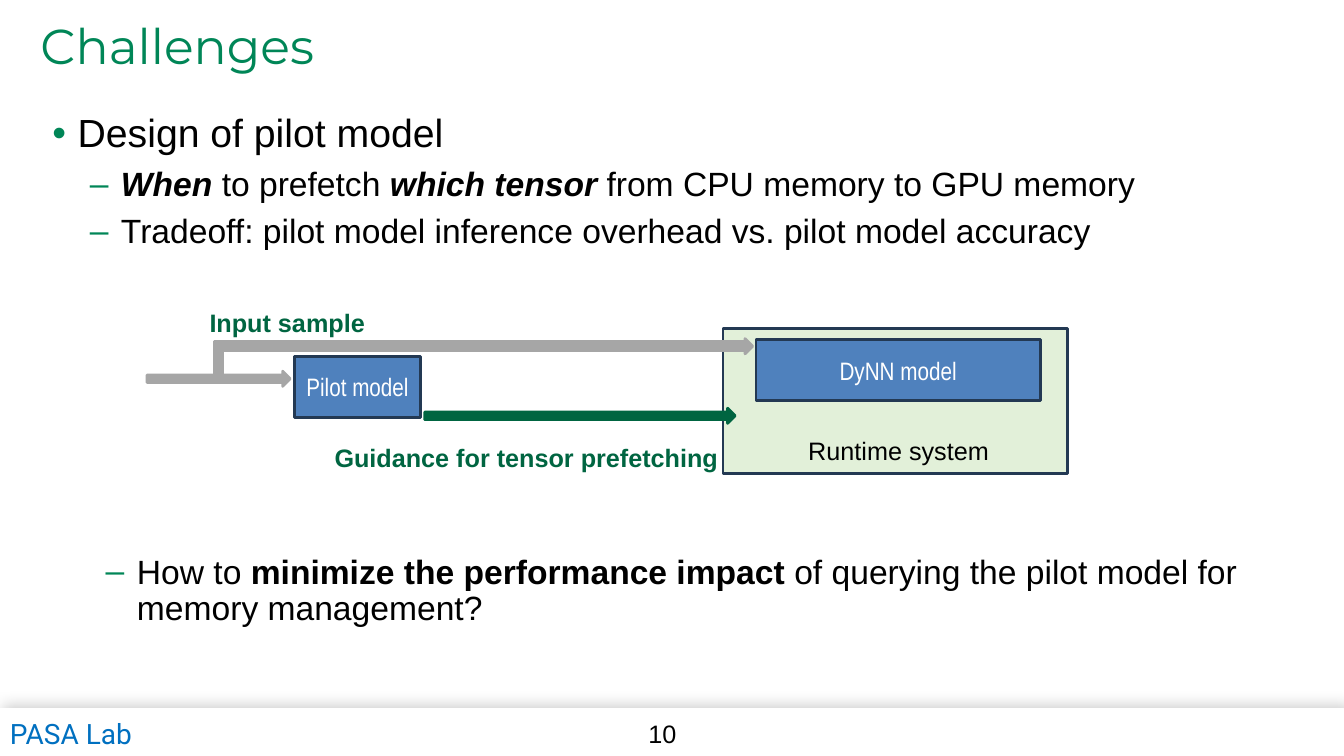
from lxml import etree
from pptx import Presentation
from pptx import util as u
from pptx.dml.color import RGBColor
from pptx.enum import shapes, text
from pptx.oxml.ns import qn

COLORS = {
    "title": "008657", "dark green": "006541", "gray": "A6A6A6",
    "blue": "4F81BD", "navy": "233953", "pale green": "E2F0D9",
    "lab": "0070C0", "black": "000000", "white": "FFFFFF",
}
KIND = shapes.MSO_SHAPE

deck = Presentation()
deck.slide_width, deck.slide_height = u.Inches(13.33), u.Inches(7.5)
column, row = deck.slide_width / 100, deck.slide_height / 100
slide = deck.slides.add_slide(deck.slide_layouts[1])


def cells(x, y, w, h):
    return [round(n) for n in (x * column, y * row, w * column, h * row)]


def add_run(paragraph, words, size, font, color, bold=False, italic=False):
    run = paragraph.add_run()
    run.text = words
    run.font.size, run.font.name = u.Pt(size), font
    run.font.bold, run.font.italic = bold, italic
    run.font.color.rgb = RGBColor.from_string(COLORS[color])


diagram = [
    (KIND.RECTANGLE, (0, 93.7, 100, 6.3), "white", "white", 0.75, ""),
    (KIND.RECTANGLE, (53.8, 43.5, 25.65, 19.1), "pale green", "navy", 2, ""),
    (KIND.RECTANGLE, (21.9, 47.1, 9.4, 8.1), "blue", "navy", 2, "Pilot model"),
    (KIND.RECTANGLE, (56.25, 44.9, 21.15, 8.1), "blue", "navy", 2, "DyNN model"),
    (KIND.RIGHT_ARROW, (10.95, 49.1, 10.65, 2), "gray", "gray", 2, ""),
    (KIND.BENT_UP_ARROW, (15.6, 45.2, 40, 4.7), "gray", "gray", 2, ""),
    (KIND.RIGHT_ARROW, (48.5, 44.8, 7.5, 2), "gray", "gray", 2, ""),
    (KIND.RIGHT_ARROW, (31.6, 54, 23.1, 2), "dark green", "dark green", 2, ""),
]
for kind, place, fill, outline, weight, name in diagram:
    part = slide.shapes.add_shape(kind, *cells(*place))
    part.shadow.inherit = False
    part.fill.solid()
    part.fill.fore_color.rgb = RGBColor.from_string(COLORS[fill])
    part.line.color.rgb = RGBColor.from_string(COLORS[outline])
    part.line.width = u.Pt(weight)
    if kind == KIND.BENT_UP_ARROW:
        part.rotation = 180
        part.adjustments[2] = 0
    if fill == "white":
        effects = part.element.spPr.find(qn("a:effectLst"))
        shadow = etree.SubElement(effects, qn("a:outerShdw"), blurRad=str(u.Pt(10)),
                                  dist=str(u.Pt(3)), dir="18900000", rotWithShape="0")
        tint = etree.SubElement(shadow, qn("a:srgbClr"), val=COLORS["black"])
        etree.SubElement(tint, qn("a:alpha"), val="20000")
    if name:
        part.text_frame.word_wrap = True
        part.text_frame.margin_left = part.text_frame.margin_right = 0
        part.text_frame.vertical_anchor = text.MSO_ANCHOR.MIDDLE
        caption = part.text_frame.paragraphs[0]
        caption.alignment = text.PP_ALIGN.CENTER
        add_run(caption, name, 18, "Arial Narrow", "white")

labels = [
    ("PASA Lab", (0, 94.1, 11.2, 5.9), 20, "Roboto", "lab", False),
    ("10", (47.5, 94.4, 6.2, 5.3), 18, "Arial", "black", False),
    ("Runtime system", (59.4, 56.9, 15.6, 5.3), 18, "Arial", "black", False),
    ("Input sample", (14.85, 40, 13.2, 5.3), 18, "Arial", "dark green", True),
    ("Guidance for tensor prefetching", (24.15, 57.9, 30.3, 5.3), 18, "Arial", "dark green", True),
]
for words, place, size, font, color, bold in labels:
    label = slide.shapes.add_textbox(*cells(*place)).text_frame
    label.word_wrap = False
    add_run(label.paragraphs[0], words, size, font, color, bold)

heading = slide.shapes.title
heading.left, heading.top, heading.width, heading.height = cells(2.25, 2.5, 90, 8.1)
heading.text_frame.auto_size = text.MSO_AUTO_SIZE.NONE
heading.text_frame.vertical_anchor = text.MSO_ANCHOR.MIDDLE
heading.text_frame.paragraphs[0].alignment = text.PP_ALIGN.LEFT
heading.text_frame.paragraphs[0].line_spacing = 0.85
add_run(heading.text_frame.paragraphs[0], "Challenges", 35, "Montserrat", "title")

design = slide.placeholders[1]
design.left, design.top, design.width, design.height = cells(3.15, 14.4, 90, 25)
question = slide.shapes.add_textbox(*cells(4.35, 72.8, 90, 20))

levels = [("•", 0.25, 0.25, 28), ("–", 0.68, 0.31, 24)]
points = [
    (design, [
        (0, [("Design of pilot model", False, False)]),
        (1, [("When", True, True), (" to prefetch ", False, False),
             ("which tensor ", True, True),
             ("from CPU memory to GPU memory", False, False)]),
        (1, [("Tradeoff: pilot model inference overhead vs. pilot model accuracy", False, False)]),
    ]),
    (question, [
        (1, [("How to ", False, False), ("minimize the performance impact ", True, False),
             ("of querying the pilot model for memory management?", False, False)]),
    ]),
]
for holder, items in points:
    frame = holder.text_frame
    frame.word_wrap = True
    frame.auto_size = text.MSO_AUTO_SIZE.NONE
    frame.vertical_anchor = text.MSO_ANCHOR.TOP
    for index, (level, phrases) in enumerate(items):
        point = frame.add_paragraph() if index else frame.paragraphs[0]
        mark, indent, hang, size = levels[level]
        props = point._p.get_or_add_pPr()
        props.set("marL", str(u.Inches(indent)))
        props.set("indent", str(-u.Inches(hang)))
        bullet_color = etree.SubElement(props, qn("a:buClr"))
        etree.SubElement(bullet_color, qn("a:srgbClr"), val=COLORS["title"])
        etree.SubElement(props, qn("a:buFont"), typeface="Arial")
        etree.SubElement(props, qn("a:buChar"), char=mark)
        point.level = level
        point.line_spacing = 0.9
        point.space_before = u.Pt(8 if index else 0)
        for words, bold, italic in phrases:
            add_run(point, words, size, "Arial", "black", bold, italic)

deck.save("out.pptx")
